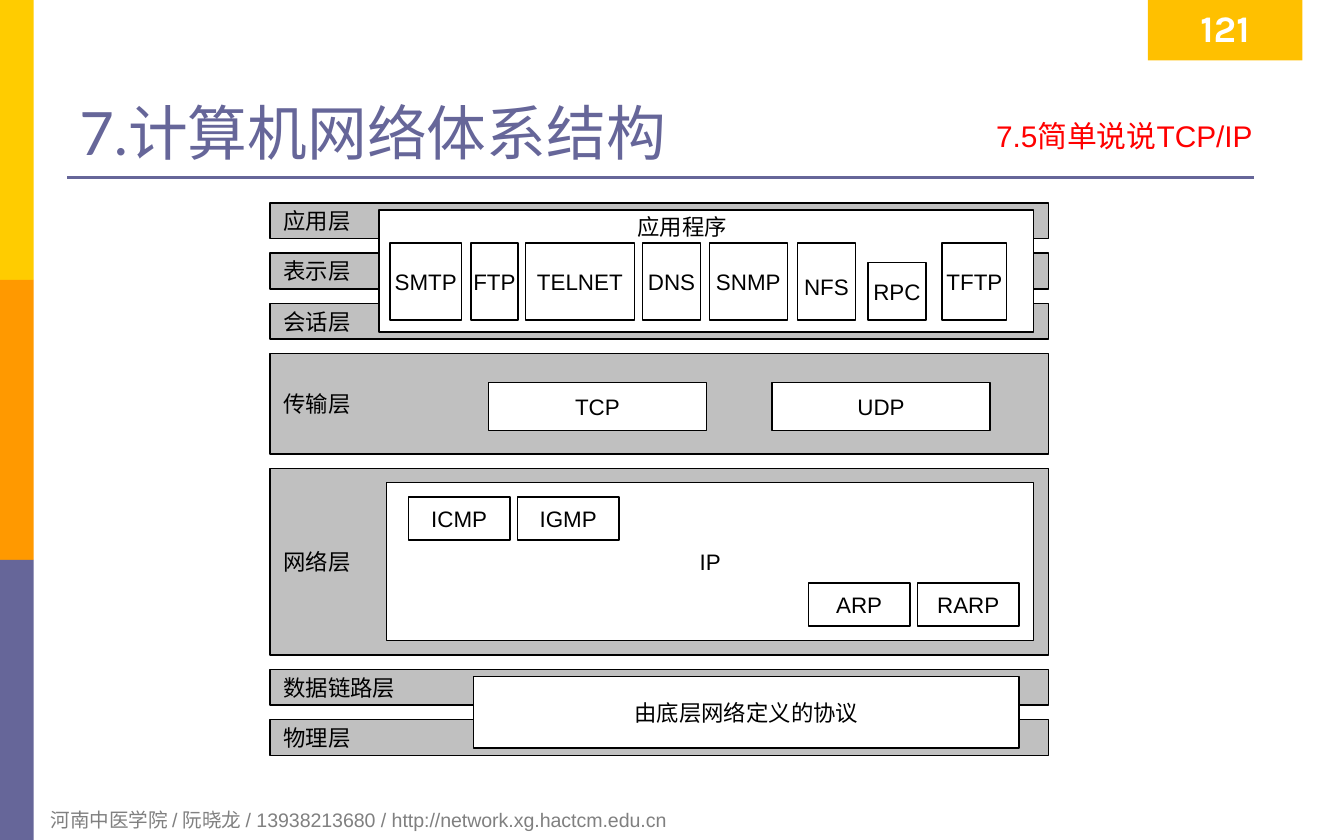
import dataclasses

import pptx
import pptx.dml.color
import pptx.enum.shapes
import pptx.enum.text
import pptx.oxml.ns
import pptx.util
from lxml import etree

ALIGN = pptx.enum.text.PP_ALIGN
ANCHOR = pptx.enum.text.MSO_ANCHOR
INCH = pptx.util.Inches


@dataclasses.dataclass(frozen=True)
class Theme:
    yellow: str = "FFCC00"
    orange: str = "FF9900"
    violet: str = "666699"
    badge: str = "FFC000"
    red: str = "FF0000"
    gray: str = "808080"
    layer: str = "C0C0C0"
    white: str = "FFFFFF"
    black: str = "000000"
    body_font: str = "Arial"
    title_font: str = "Lato"
    number_font: str = "Karla"
    title_size: float = 32
    number_size: float = 20
    section_size: float = 16
    diagram_size: float = 12
    footer_size: float = 10.5
    border: float = 0.75
    rule: float = 1.5


THEME = Theme()
WIDTH, HEIGHT = 10, 6.25
GRID_LEFT, GRID_TOP = 2.01, 1.51
COLUMN, ROW = 5.79 / 107, 4.11 / 77


def rgb(value):
    return pptx.dml.color.RGBColor.from_string(value)


def write_text(shape, text, size=THEME.diagram_size, color=THEME.black,
               font=THEME.body_font, bold=False, align=ALIGN.LEFT,
               anchor=ANCHOR.TOP, wrap=True, margins=(0.09, 0.04, 0.09, 0.04)):
    frame = shape.text_frame
    frame.word_wrap = wrap
    frame.vertical_anchor = anchor
    (frame.margin_left, frame.margin_top,
     frame.margin_right, frame.margin_bottom) = map(INCH, margins)
    paragraph = frame.paragraphs[0]
    paragraph.alignment = align
    run = paragraph.add_run()
    run.text = text
    run.font.size = pptx.util.Pt(size)
    run.font.name = font
    run.font.bold = bold
    run.font.color.rgb = rgb(color)


class SlideBuilder:
    def __init__(self, presentation, theme):
        self.theme = theme
        self.slide = presentation.slides.add_slide(presentation.slide_layouts[6])

    def area(self, left, top, width, height):
        return (INCH(left * WIDTH), INCH(top * HEIGHT),
                INCH(width * WIDTH), INCH(height * HEIGHT))

    def cells(self, column, row, columns, rows):
        return (INCH(GRID_LEFT + column * COLUMN), INCH(GRID_TOP + row * ROW),
                INCH(columns * COLUMN), INCH(rows * ROW))

    def block(self, area, fill, border=None):
        shape = self.slide.shapes.add_shape(
            pptx.enum.shapes.MSO_SHAPE.RECTANGLE, *area)
        shape.shadow.inherit = False
        shape.fill.solid()
        shape.fill.fore_color.rgb = rgb(fill)
        if border:
            shape.line.color.rgb = rgb(border)
            shape.line.width = pptx.util.Pt(self.theme.border)
        else:
            shape.line.fill.background()
        return shape

    def label(self, area, text, **style):
        write_text(self.slide.shapes.add_textbox(*area), text, **style)

    def rule(self, left, right, top):
        start, level, length, _ = self.area(left, top, right - left, 0)
        line = self.slide.shapes.add_connector(
            pptx.enum.shapes.MSO_CONNECTOR.STRAIGHT, start, level, start + length, level)
        line.line.color.rgb = rgb(self.theme.violet)
        line.line.width = pptx.util.Pt(self.theme.rule)
        properties = line._element.find(pptx.oxml.ns.qn("p:spPr"))
        etree.SubElement(properties, pptx.oxml.ns.qn("a:effectLst"))

    def grid_box(self, text, *place, fill=THEME.white, align=ALIGN.CENTER, inset_top=0.05):
        shape = self.block(self.cells(*place), fill, self.theme.black)
        if text:
            write_text(shape, text, align=align, anchor=ANCHOR.MIDDLE,
                       wrap=False, margins=(0.1, inset_top, 0.1, 0.05))

    def layers(self, layers, gap):
        row = 0
        for text, rows in layers:
            self.grid_box(text, 0, row, 107, rows, fill=self.theme.layer, align=ALIGN.LEFT)
            row += rows + gap


def build_frame(builder):
    theme = builder.theme
    for index, color in enumerate((theme.yellow, theme.orange, theme.violet)):
        builder.block(builder.area(0, index / 3, 0.025, 1 / 3), color)
    builder.rule(0.05, 0.933, 0.211)
    builder.label(builder.area(0.028, 0.954, 0.677, 0.045),
                  "河南中医学院 / 阮晓龙 / 13938213680 / http://network.xg.hactcm.edu.cn",
                  size=theme.footer_size, color=theme.gray, margins=(0.1, 0.05, 0.1, 0.05))
    builder.label(builder.area(0.05, 0.04, 0.9, 0.166), "7.计算机网络体系结构",
                  size=theme.title_size, color=theme.violet,
                  font=theme.title_font, anchor=ANCHOR.BOTTOM)
    badge = builder.block(builder.area(0.854, 0, 0.115, 0.072), theme.badge)
    write_text(badge, "121", size=theme.number_size, color=theme.white,
               font=theme.number_font, bold=True, align=ALIGN.CENTER)
    builder.label(builder.area(0.626, 0.134, 0.315, 0.062), "7.5简单说说TCP/IP",
                  size=theme.section_size, color=theme.red, align=ALIGN.RIGHT)


def build_diagram(builder):
    builder.layers((("应用层", 5), ("表示层", 5), ("会话层", 5), ("传输层", 14),
                    ("网络层", 26), ("数据链路层", 5), ("物理层", 5)), gap=2)

    builder.grid_box("", 15, 1, 90, 17)
    builder.label(builder.cells(48.6, 0.5, 16.1, 5.6), "应用程序", align=ALIGN.CENTER,
                  wrap=False, margins=(0.1, 0.05, 0.1, 0.05))
    for text, column, columns in (("SMTP", 16.5, 9.8), ("FTP", 27.6, 6.5),
                                  ("TELNET", 35.1, 15), ("DNS", 51.2, 8),
                                  ("SNMP", 60.4, 10.7), ("TFTP", 92.4, 8.9)):
        builder.grid_box(text, column, 5.6, columns, 10.7)
    builder.grid_box("NFS", 72.5, 5.6, 8, 10.7, inset_top=0.13)
    builder.grid_box("RPC", 82.2, 8.3, 8, 8)

    for text, column in (("TCP", 30), ("UDP", 69)):
        builder.grid_box(text, column, 25, 30, 6.7)

    builder.grid_box("IP", 16, 39, 89, 22)
    for names, first_column, row in ((("ICMP", "IGMP"), 19, 41),
                                     (("ARP", "RARP"), 74, 53)):
        for index, text in enumerate(names):
            builder.grid_box(text, first_column + 15 * index, row, 14, 6)

    builder.grid_box("由底层网络定义的协议", 28, 66, 75, 10)


def main():
    presentation = pptx.Presentation()
    presentation.slide_width = INCH(WIDTH)
    presentation.slide_height = INCH(HEIGHT)
    builder = SlideBuilder(presentation, THEME)
    build_frame(builder)
    build_diagram(builder)
    presentation.save("out.pptx")


if __name__ == "__main__":
    main()
